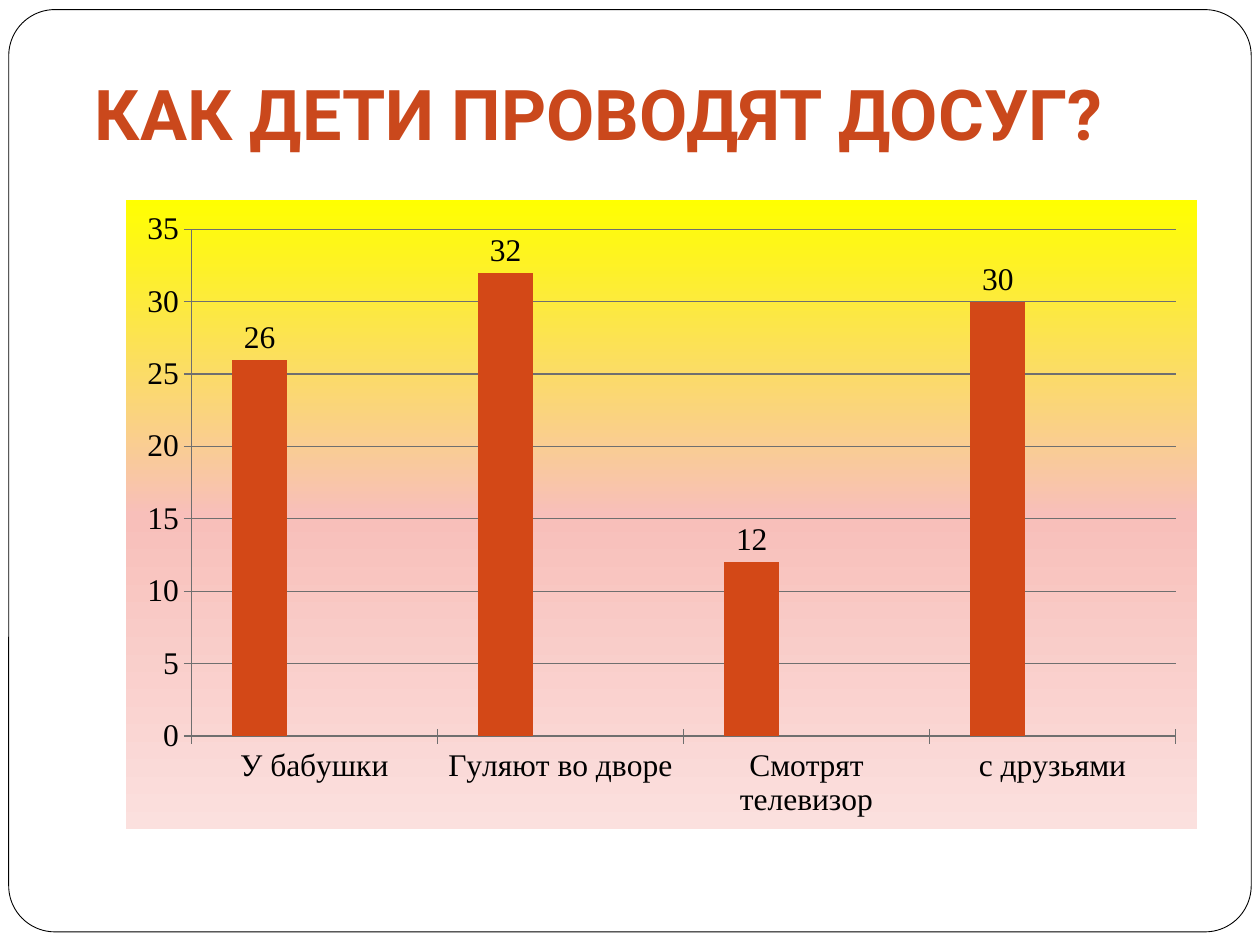
from lxml import etree
from pptx import Presentation
from pptx.chart.data import CategoryChartData
from pptx.dml.color import RGBColor
from pptx.enum.chart import XL_CHART_TYPE, XL_LABEL_POSITION, XL_TICK_MARK
from pptx.enum.shapes import MSO_SHAPE
from pptx.enum.text import MSO_ANCHOR, PP_ALIGN
from pptx.oxml import parse_xml
from pptx.oxml.ns import nsdecls, qn
from pptx.util import Pt

ROUNDED = MSO_SHAPE.ROUNDED_RECTANGLE
COLUMNS = XL_CHART_TYPE.COLUMN_CLUSTERED
OUTSIDE_END = XL_LABEL_POSITION.OUTSIDE_END
CROSS = XL_TICK_MARK.CROSS
BOTTOM = MSO_ANCHOR.BOTTOM
CENTER = PP_ALIGN.CENTER

BLACK = RGBColor(0x00, 0x00, 0x00)
WHITE = RGBColor(0xFF, 0xFF, 0xFF)
RUST = RGBColor(0xCA, 0x48, 0x1C)
GRID_GREY = RGBColor(0x6F, 0x6F, 0x6F)
YELLOW = RGBColor(0xFF, 0xFF, 0x00)
PINK = RGBColor(0xF8, 0xBF, 0xBA)
PALE_PINK = RGBColor(0xFB, 0xE0, 0xDE)
SERIES_COLORS = [
    RGBColor(0xD3, 0x48, 0x17),
    RGBColor(0x9B, 0x2D, 0x1F),
    RGBColor(0xA2, 0x8E, 0x6A),
]

ACTIVITIES = ["У бабушки", "Гуляют во дворе", "Смотрят телевизор", "с друзьями"]
CHILDREN = [26, 32, 12, 30]
NO_VALUES = [None] * len(ACTIVITIES)


def add_frame(slide):
    frame = slide.shapes.add_shape(ROUNDED, Pt(5), Pt(5.5), Pt(710), Pt(527))
    frame.adjustments[0] = 0.05
    frame.shadow.inherit = False
    frame.fill.solid()
    frame.fill.fore_color.rgb = WHITE
    frame.line.color.rgb = BLACK
    frame.line.width = Pt(0.5)


def add_title(slide, wording):
    title = slide.shapes.add_textbox(Pt(0), Pt(21.6), Pt(684), Pt(74)).text_frame
    title.word_wrap = True
    title.vertical_anchor = BOTTOM
    title.margin_bottom = Pt(7.2)
    title.text = wording
    paragraph = title.paragraphs[0]
    paragraph.alignment = CENTER
    font = paragraph.runs[0].font
    font.name = "Roboto"
    font.size = Pt(40)
    font.bold = True
    font.color.rgb = RUST


def fill_chart_background(chart, stops):
    properties = parse_xml(
        f'<c:spPr {nsdecls("c", "a")}><a:gradFill><a:gsLst/>'
        '<a:lin ang="5400000" scaled="0"/></a:gradFill>'
        "<a:ln><a:noFill/></a:ln></c:spPr>"
    )
    stop_list = properties.find(".//" + qn("a:gsLst"))
    for percent, color in stops:
        stop = etree.SubElement(stop_list, qn("a:gs"), pos=str(percent * 1000))
        etree.SubElement(stop, qn("a:srgbClr"), val=str(color))
    chart.element.find(qn("c:chart")).addnext(properties)


def style_line(line):
    line.color.rgb = GRID_GREY
    line.width = Pt(0.75)


def add_leisure_chart(slide):
    data = CategoryChartData()
    data.categories = ACTIVITIES
    for number, values in enumerate([CHILDREN, NO_VALUES, NO_VALUES], 1):
        data.add_series(f"Series {number}", values)
    chart = slide.shapes.add_chart(
        COLUMNS, Pt(72), Pt(114), Pt(612), Pt(360), data
    ).chart
    chart.has_legend = False
    chart.has_title = False
    chart.font.name = "Times New Roman"
    chart.font.size = Pt(18)
    chart.font.color.rgb = BLACK
    fill_chart_background(chart, [(0, YELLOW), (50, PINK), (100, PALE_PINK)])

    plot = chart.plots[0]
    plot.vary_by_categories = False
    plot.gap_width = 150
    plot.overlap = 0
    for series, color in zip(plot.series, SERIES_COLORS):
        series.format.fill.solid()
        series.format.fill.fore_color.rgb = color
    labels = plot.series[0].data_labels
    labels.show_value = True
    labels.position = OUTSIDE_END

    for axis in (chart.category_axis, chart.value_axis):
        axis.major_tick_mark = CROSS
        style_line(axis.format.line)
    counts = chart.value_axis
    counts.minimum_scale = 0
    counts.maximum_scale = 35
    counts.major_unit = 5
    counts.has_major_gridlines = True
    style_line(counts.major_gridlines.format.line)


def main():
    presentation = Presentation()
    presentation.slide_width = Pt(720)
    presentation.slide_height = Pt(540)
    slide = presentation.slides.add_slide(presentation.slide_layouts[6])
    add_frame(slide)
    add_title(slide, "КАК ДЕТИ ПРОВОДЯТ ДОСУГ?")
    add_leisure_chart(slide)
    presentation.save("out.pptx")


if __name__ == "__main__":
    main()
